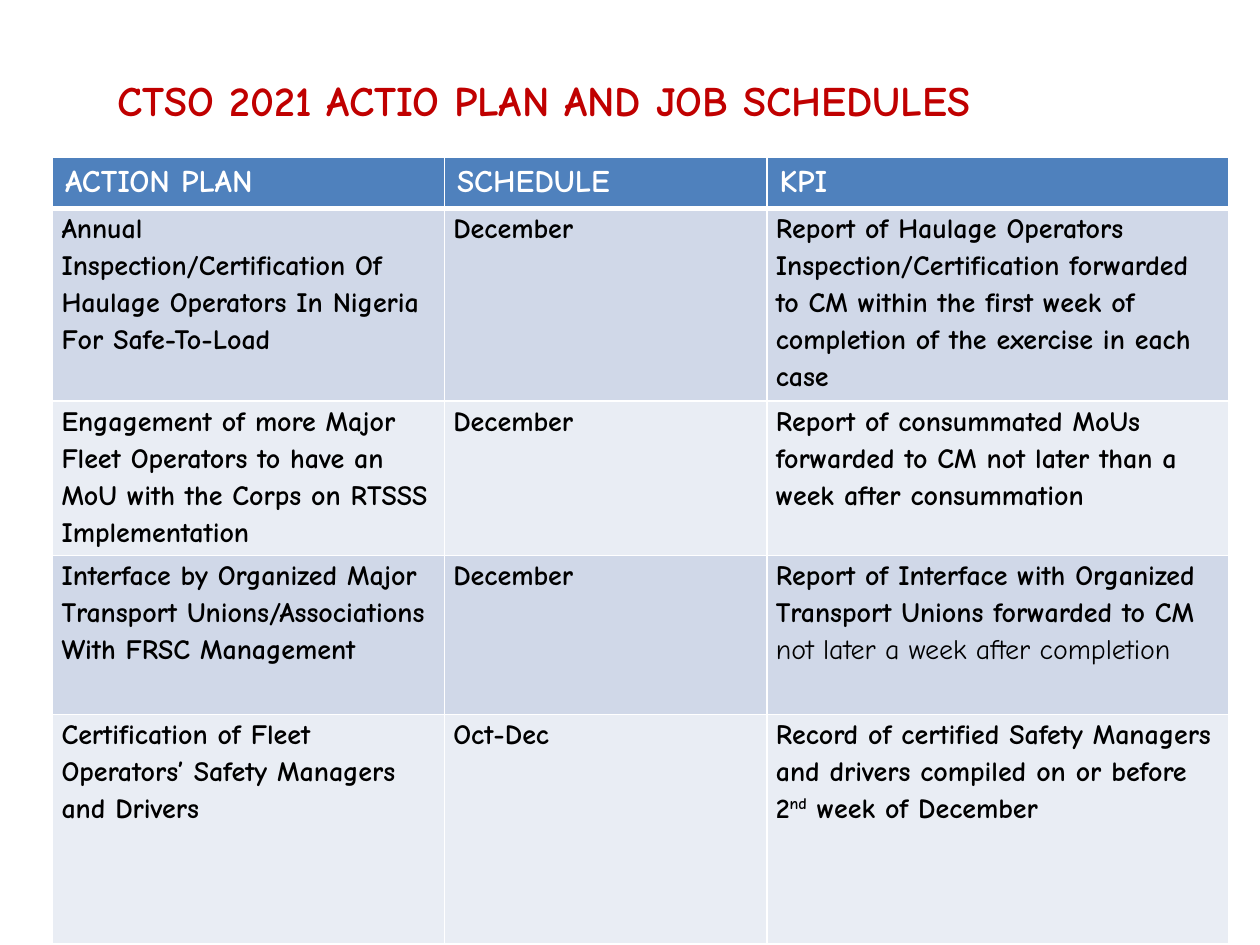
from lxml.etree import SubElement
from pptx import Presentation
from pptx.dml.color import RGBColor
from pptx.enum.text import MSO_ANCHOR, PP_ALIGN
from pptx.oxml.ns import qn
from pptx.util import Cm, Pt

FONT = "Comic Neue"
WHITE = "FFFFFF"
HEADER_FILL = "4F81BD"
BAND_FILLS = ("D0D8E8", "E9EDF4")
COLUMN_WIDTHS = (7.9, 6.5, 9.32)
ROW_HEIGHTS = (0.94, 3.76, 2.95, 3.2, 4.62)

HEADERS = ("ACTION PLAN", "SCHEDULE", "KPI")
# Each KPI is a list of (text, style) pieces.
ACTIONS = (
    ("Annual Inspection/Certification Of Haulage Operators In Nigeria For Safe-To-Load",
     "December",
     [("Report of Haulage Operators Inspection/Certification forwarded to CM "
       "within the first week of completion of the exercise in each case", "bold")]),
    ("Engagement of more Major Fleet Operators to have an MoU with the Corps "
     "on RTSSS Implementation",
     "December",
     [("Report of consummated MoUs forwarded to CM not later than a week "
       "after consummation", "bold")]),
    ("Interface by Organized Major Transport Unions/Associations With FRSC Management",
     "December",
     [("Report of Interface with Organized Transport Unions forwarded to CM ", "bold"),
      ("not later a week after completion", "regular")]),
    ("Certification of Fleet Operators’ Safety Managers and Drivers",
     "Oct-Dec",
     [("Record of certified Safety Managers and drivers compiled on or before 2", "bold"),
      ("nd", "superscript"),
      (" week of December", "bold")]),
)


def color(hex_string):
    return RGBColor.from_string(hex_string)


def write_pieces(paragraph, pieces, size, hex_color):
    """Add one formatted run for each (text, style) piece."""
    for text, style in pieces:
        run = paragraph.add_run()
        run.text = text
        font = run.font
        font.name = FONT
        font.size = Pt(size)
        font.bold = style != "regular"
        font.color.rgb = color(hex_color)
        if style == "superscript":
            run._r.get_or_add_rPr().set("baseline", "30000")


def set_borders(cell, top=1, bottom=1):
    """Draw white borders; they must precede the fill in the cell's XML."""
    properties = cell._tc.get_or_add_tcPr()
    for side, width in (("L", 1), ("R", 1), ("T", top), ("B", bottom)):
        line = SubElement(properties, qn(f"a:ln{side}"), w=str(Pt(width)))
        fill = SubElement(line, qn("a:solidFill"))
        SubElement(fill, qn("a:srgbClr"), val=WHITE)


def fill_cell(cell, hex_color):
    cell.fill.solid()
    cell.fill.fore_color.rgb = color(hex_color)


def add_title(slide, text):
    title = slide.shapes.add_textbox(Cm(2.12), Cm(1.06), Cm(21.59), Cm(1.9))
    text_frame = title.text_frame
    text_frame.word_wrap = True
    text_frame.vertical_anchor = MSO_ANCHOR.MIDDLE
    paragraph = text_frame.paragraphs[0]
    paragraph.alignment = PP_ALIGN.LEFT
    write_pieces(paragraph, [(text, "bold")], 24, "C00000")


def write_header(table):
    for column, text in enumerate(HEADERS):
        cell = table.cell(0, column)
        set_borders(cell, bottom=3)
        fill_cell(cell, HEADER_FILL)
        write_pieces(cell.text_frame.paragraphs[0], [(text, "bold")], 18, WHITE)


def write_action(table, row, action):
    plan, schedule, kpi = action
    for column, pieces in enumerate(([(plan, "bold")], [(schedule, "bold")], kpi)):
        cell = table.cell(row, column)
        set_borders(cell, top=3 if row == 1 else 1)
        fill_cell(cell, BAND_FILLS[(row - 1) % 2])
        cell.margin_left = cell.margin_right = Cm(0.18)
        cell.margin_top = cell.margin_bottom = 0
        paragraph = cell.text_frame.paragraphs[0]
        paragraph.line_spacing = 1.15
        write_pieces(paragraph, pieces, 16, "000000")


def add_action_table(slide):
    frame = slide.shapes.add_table(
        len(ROW_HEIGHTS), len(COLUMN_WIDTHS), Cm(1.06), Cm(3.18),
        Cm(sum(COLUMN_WIDTHS)), Cm(sum(ROW_HEIGHTS)))
    table = frame.table
    for column, width in zip(table.columns, COLUMN_WIDTHS):
        column.width = Cm(width)
    for row, height in zip(table.rows, ROW_HEIGHTS):
        row.height = Cm(height)
    write_header(table)
    for row, action in enumerate(ACTIONS, start=1):
        write_action(table, row, action)


def main():
    presentation = Presentation()
    presentation.slide_width = Cm(25.4)
    presentation.slide_height = Cm(19.05)
    slide = presentation.slides.add_slide(presentation.slide_layouts[6])
    add_title(slide, "CTSO 2021 ACTIO PLAN AND JOB SCHEDULES")
    add_action_table(slide)
    presentation.save("out.pptx")


if __name__ == "__main__":
    main()
